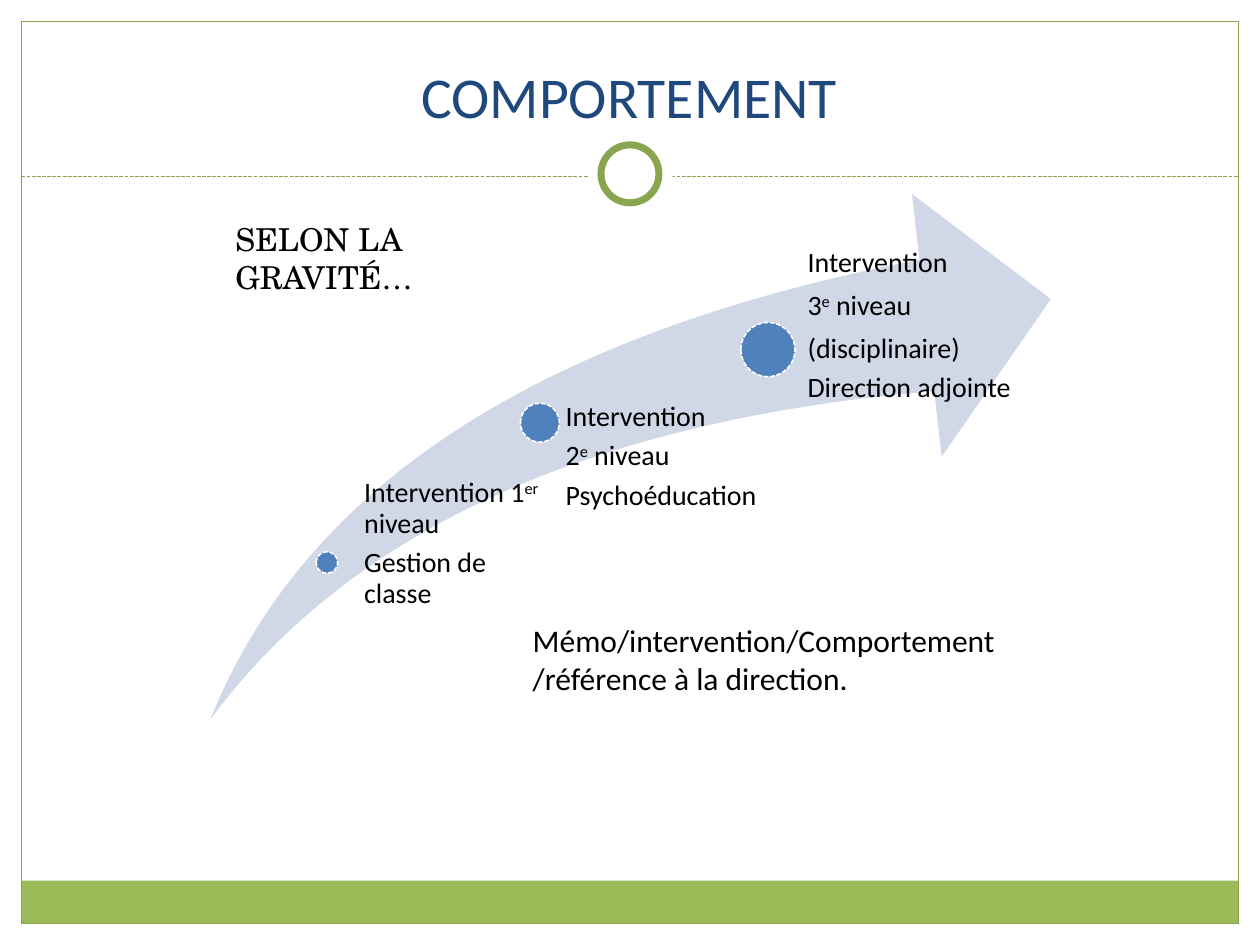
from pptx import Presentation
from pptx.dml.color import RGBColor
from pptx.enum.dml import MSO_LINE
from pptx.enum.shapes import MSO_CONNECTOR, MSO_SHAPE as Kind
from pptx.enum.text import MSO_ANCHOR as Anchor, PP_ALIGN as Align
from pptx.oxml.ns import qn
from pptx.util import Inches, Pt
from lxml.etree import SubElement

GREEN = RGBColor(0x9B, 0xBB, 0x59)
DARK_GREEN = RGBColor(0x89, 0xA5, 0x4F)
NAVY = RGBColor(0x1F, 0x49, 0x7D)
BLUE = RGBColor(0x4F, 0x81, 0xBD)
PALE_BLUE = RGBColor(0xD0, 0xD8, 0xE8)
WHITE = RGBColor(0xFF, 0xFF, 0xFF)
BLACK = RGBColor(0, 0, 0)

LEVELS = [
    {"dot": (2.51, 4.38, 0.17), "box": (2.8, 3.8, 1.55, 1.84), "inset": 0.09,
     "lines": [(0.9, ["Intervention 1", "er", " niveau"]), (0.9, ["Gestion de classe"])]},
    {"dot": (4.13, 3.2, 0.31), "box": (4.32, 3.19, 1.86, 0.96), "inset": 0.17,
     "lines": [(0.9, ["Intervention"]), (0.9, ["2", "e", " niveau"]), (0.9, ["Psychoéducation"])]},
    {"dot": (5.88, 2.56, 0.43), "box": (6.18, 1.94, 1.86, 2.42), "inset": 0.23,
     "lines": [(1.0, ["Intervention"]), (1.0, ["3", "e", " niveau"]),
               (1.0, ["(disciplinaire)"]), (0.9, ["Direction adjointe"])]},
]


def apply(target, values):
    """Set each attribute of the target from a dict."""
    for name, value in values.items():
        setattr(target, name, value)


def set_line(line, color, width, dash=None):
    """Format an outline or a connector line."""
    line.color.rgb = color
    apply(line, {"width": Pt(width), "dash_style": dash})


def add_form(page, kind, box, fill=None, outline=None):
    """Add a preset shape with an optional fill and outline."""
    shape = page.shapes.add_shape(kind, *map(Inches, box))
    shape.shadow.inherit = False
    if fill is None:
        shape.fill.background()
    else:
        shape.fill.solid()
        shape.fill.fore_color.rgb = fill
    if outline is None:
        shape.line.fill.background()
    else:
        set_line(shape.line, *outline)
    return shape


def add_span(para, text, size, color=BLACK, font="Calibri"):
    """Add a formatted run to a paragraph."""
    span = para.add_run()
    span.text = text
    apply(span.font, {"name": font, "size": Pt(size)})
    span.font.color.rgb = color
    return span


def add_frame(page, box):
    """Draw the border, bottom band and divider with its ring."""
    left, top, width, height = box
    band = 0.34
    add_form(page, Kind.RECTANGLE, (left, top + height - band, width, band), GREEN)
    add_form(page, Kind.RECTANGLE, box, outline=(DARK_GREEN, 0.75))
    divider = page.shapes.add_connector(
        MSO_CONNECTOR.STRAIGHT, *map(Inches, (left, 1.4, left + width, 1.4)))
    set_line(divider.line, DARK_GREEN, 0.75, MSO_LINE.SQUARE_DOT)
    SubElement(divider._element.spPr, qn("a:effectLst"))
    add_form(page, Kind.OVAL, (4.67, 1.05, 0.67, 0.67), WHITE)
    add_form(page, Kind.OVAL, (4.77, 1.15, 0.46, 0.46), WHITE, (DARK_GREEN, 4))


def add_title(page, box, text):
    """Place and format the title placeholder."""
    title = page.shapes.title
    apply(title, dict(zip(("left", "top", "width", "height"), map(Inches, box))))
    title.text_frame.vertical_anchor = Anchor.BOTTOM
    para = title.text_frame.paragraphs[0]
    para.alignment = Align.CENTER
    add_span(para, text, 33, NAVY)


def add_level(page, dot, box, inset, lines):
    """Add one step of the arrow: its dot and its label."""
    left, top, size = dot
    add_form(page, Kind.OVAL, (left, top, size, size), BLUE, (WHITE, 0.9, MSO_LINE.SQUARE_DOT))
    frame = page.shapes.add_textbox(*map(Inches, box)).text_frame
    apply(frame, {"word_wrap": True, "margin_left": Inches(inset), "margin_top": 0,
                  "margin_right": 0, "margin_bottom": 0})
    for index, (spacing, parts) in enumerate(lines):
        para = frame.add_paragraph() if index else frame.paragraphs[0]
        apply(para, {"line_spacing": spacing, "space_after": Pt(5.4)})
        for position, part in enumerate(parts):
            span = add_span(para, part, 16)
            if position == 1:
                span.font._element.set("baseline", "30000")


def add_arrow(page, box):
    """Draw the rising arrow and its three levels."""
    arrow = add_form(page, Kind.SWOOSH_ARROW, box, PALE_BLUE)
    for index in range(2):
        arrow.adjustments[index] = 0.25
    for level in LEVELS:
        add_level(page, **level)


def add_note(page, box, text, font):
    """Add a wrapped text box."""
    frame = page.shapes.add_textbox(*map(Inches, box)).text_frame
    frame.word_wrap = True
    add_span(frame.paragraphs[0], text, 18, font=font)


def main():
    """Build and save the deck."""
    deck = Presentation()
    apply(deck, {"slide_width": Inches(10), "slide_height": Inches(7.5)})
    page = deck.slides.add_slide(deck.slide_layouts[5])
    add_frame(page, (0.17, 0.17, 9.66, 7.16))
    add_title(page, (0.33, 0.25, 9.33, 0.83), "COMPORTEMENT")
    add_arrow(page, (1.67, 1.54, 6.67, 4.17))
    add_note(page, (1.77, 1.7, 2.99, 0.4), "SELON LA GRAVITÉ…", "TeX Gyre Schola")
    add_note(page, (4.13, 4.88, 4.17, 0.71),
             "Mémo/intervention/Comportement /référence à la direction.", "Calibri")
    deck.save("out.pptx")


if __name__ == "__main__":
    main()
